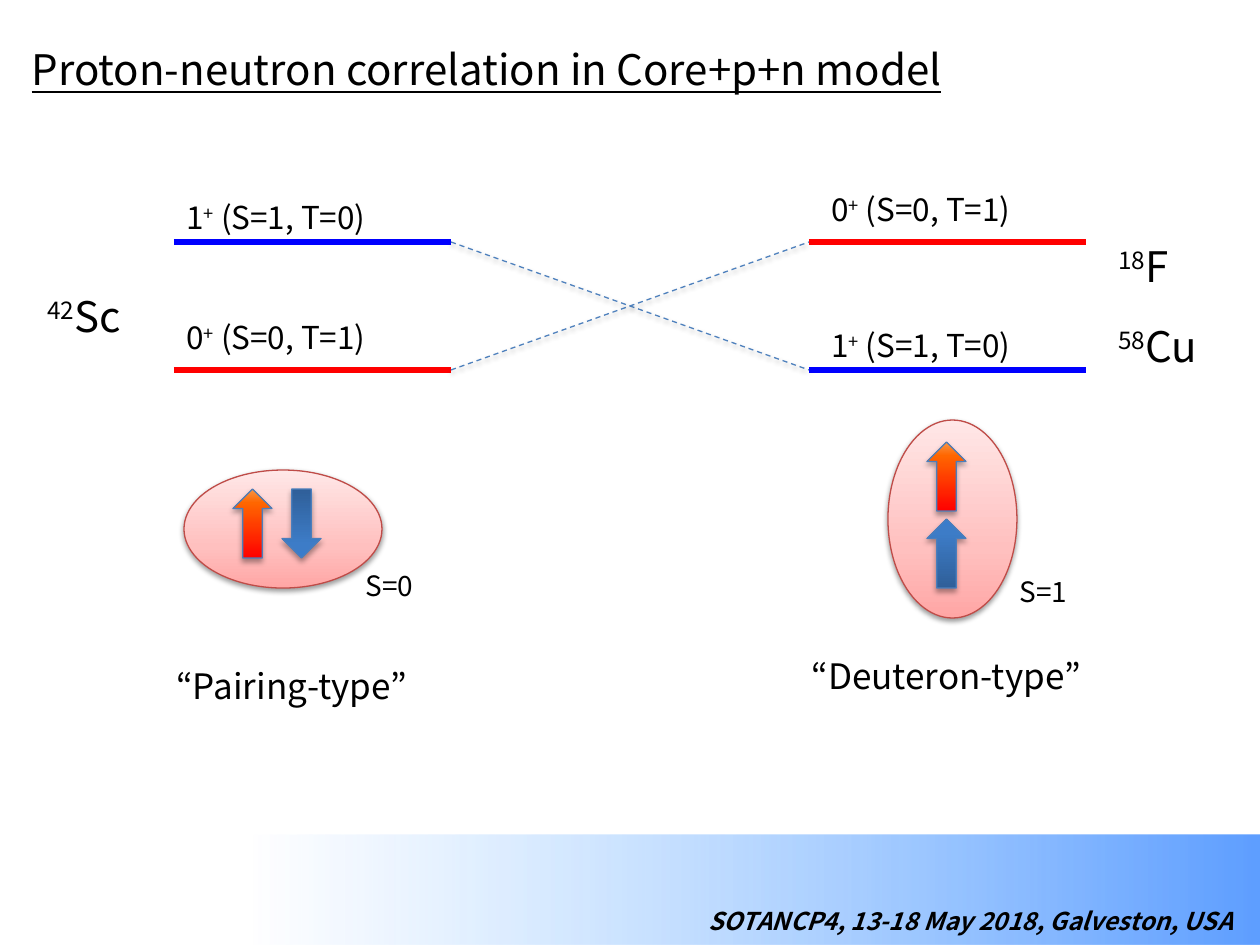
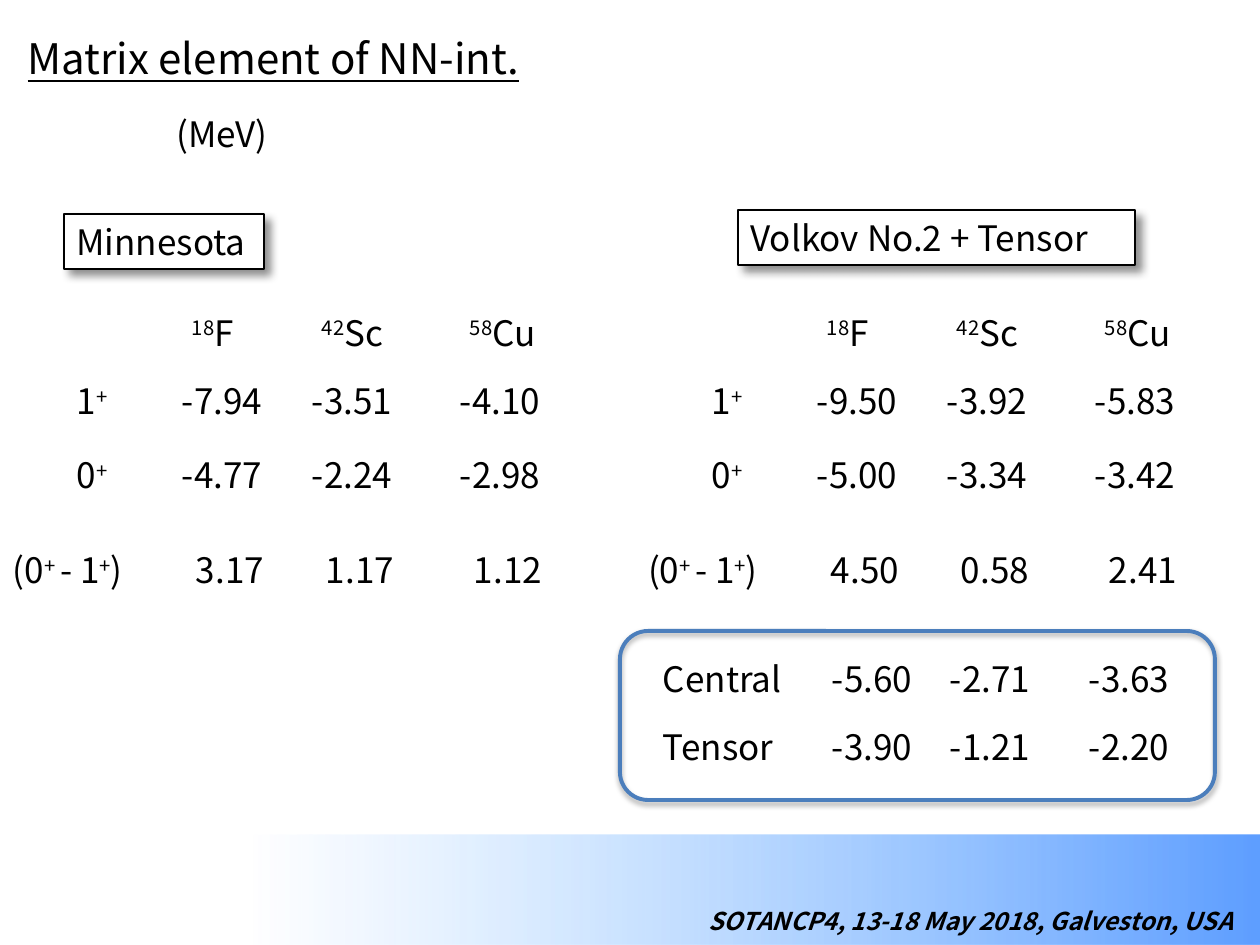
import lxml.etree
import pptx
import pptx.dml.color
import pptx.enum.dml
import pptx.enum.shapes
import pptx.enum.text
import pptx.oxml.ns
import pptx.util

PX = 914400 / 126
FONT = "Noto Sans CJK JP"
FOOTER = "SOTANCP4, 13-18 May 2018, Galveston, USA"
COLOURS = {
    "text": "000000", "paper": "FFFFFF", "triplet": "0000FF", "singlet": "FF0000",
    "crossing": "4F81BD", "pair edge": "BF4C48", "edge": "4B7EBC",
}
# Gradient stops: position in percent, colour, opacity in percent
GRADIENTS = {
    "band": [(0, "5E9EFF", 100), (80, "85C2FF", 0), (100, "85C2FF", 0)],
    "pair": [(0, "FFA6A5", 100), (35, "FFC0BF", 100), (100, "FFE7E7", 100)],
    "red": [(0, "FF0000", 100), (80, "FF6600", 100), (100, "F79646", 100)],
    "blue": [(0, "2F5F99", 100), (80, "3D7CC7", 100), (100, "3A7CCB", 100)],
}
# Shadows: opacity in percent, blur and distance in points, direction in degrees
SOFT, RAISED, CAST = (38, 3.1, 1.6, 90), (35, 3.1, 1.8, 90), (43, 5, 5, 45)
# Levels: label, colour, distance from the label's top down to the line
LEVELS = {
    "triplet": ("1^+^ (S=1, T=0)", "triplet", 50),
    "singlet": ("0^+^ (S=0, T=1)", "singlet", 58),
}
NUCLEI = ["", "^18^F", "^42^Sc", "^58^Cu"]
NO_GRID_STYLE = "{2D5ABB26-0587-4C30-8999-92F81FD0307C}"
SHAPES = pptx.enum.shapes.MSO_SHAPE


def px(*lengths):
    return [pptx.util.Emu(round(length * PX)) for length in lengths]


def rgb(name):
    return pptx.dml.color.RGBColor.from_string(COLOURS[name])


def add_node(parent, tag, **attributes):
    node = lxml.etree.SubElement(parent, pptx.oxml.ns.qn(tag))
    for key, value in attributes.items():
        node.set(key, str(value))
    return node


def add_colour(parent, hex_colour, opacity):
    colour = add_node(parent, "a:srgbClr", val=hex_colour)
    if opacity < 100:
        add_node(colour, "a:alpha", val=opacity * 1000)


def set_gradient(shape, name, angle=270):
    shape.fill.gradient()
    gradient = shape.element.spPr.find(pptx.oxml.ns.qn("a:gradFill"))
    for child in list(gradient):
        gradient.remove(child)
    stops = add_node(gradient, "a:gsLst")
    for position, hex_colour, opacity in GRADIENTS[name]:
        add_colour(add_node(stops, "a:gs", pos=position * 1000), hex_colour, opacity)
    add_node(gradient, "a:lin", ang=angle * 60000, scaled=0)


def set_line(shape, colour, width):
    shape.line.color.rgb = rgb(colour)
    shape.line.width = pptx.util.Pt(width)


def add_shadow(effects, shadow):
    opacity, blur, distance, direction = shadow
    outer = add_node(effects, "a:outerShdw", blurRad=pptx.util.Pt(blur),
                     dist=pptx.util.Pt(distance), dir=direction * 60000,
                     algn="ctr", rotWithShape=0)
    add_colour(outer, COLOURS["text"], opacity)


def set_shadow(shape, shadow):
    shape.shadow.inherit = False
    add_shadow(shape.element.spPr.find(pptx.oxml.ns.qn("a:effectLst")), shadow)


def write(frame, text, size, underline=None):
    """Fill a text frame; text between carets is raised."""
    para = frame.paragraphs[0]
    para.alignment = pptx.enum.text.PP_ALIGN.LEFT
    for index, piece in enumerate(text.split("^")):
        if not piece:
            continue
        span = para.add_run()
        span.text = piece
        span.font.name = FONT
        span.font.size = pptx.util.Pt(size)
        span.font.color.rgb = rgb("text")
        span.font.underline = underline
        if index % 2:
            span._r.get_or_add_rPr().set("baseline", "30000")


def add_text(page, box, text, size, wrap=False):
    label = page.shapes.add_textbox(*px(*box))
    label.text_frame.word_wrap = wrap
    label.text_frame.auto_size = pptx.enum.text.MSO_AUTO_SIZE.SHAPE_TO_FIT_TEXT
    write(label.text_frame, text, size)
    return label


def add_line(page, start, end, colour, width, shadow=None):
    line = page.shapes.add_connector(
        pptx.enum.shapes.MSO_CONNECTOR.STRAIGHT, *px(*start, *end))
    set_line(line, colour, width)
    effects = add_node(line.element.spPr, "a:effectLst")
    if shadow:
        add_shadow(effects, shadow)
    return line


def add_band(page, layout):
    """Place the footer band on the layout, behind everything else."""
    band = page.shapes.add_shape(SHAPES.RECTANGLE, *px(0, 835, 1260, 110))
    set_gradient(band, "band", 180)
    band.line.fill.background()
    band.shadow.inherit = False
    band.element.xpath(".//p:cNvPr")[0].set("id", "20")
    layout.shapes.element.insert(2, band.element)


def add_page(deck, title, box):
    """Add a page with its underlined title and the conference footer."""
    page = deck.slides.add_slide(deck.slide_layouts[5])
    heading = page.shapes.title
    heading.left, heading.top, heading.width, heading.height = px(*box)
    frame = heading.text_frame
    frame.word_wrap = False
    frame.auto_size = pptx.enum.text.MSO_AUTO_SIZE.SHAPE_TO_FIT_TEXT
    frame.vertical_anchor = pptx.enum.text.MSO_ANCHOR.TOP
    write(frame, title, 24, underline=True)
    footer = add_text(page, (530, 900, 716, 43), FOOTER, 14, wrap=True)
    para = footer.text_frame.paragraphs[0]
    para.alignment = pptx.enum.text.PP_ALIGN.RIGHT
    para.runs[0].font.bold = para.runs[0].font.italic = True
    return page


def add_level_pair(page, box, names, inset):
    """Draw two levels, on the top and the bottom edge of the box."""
    left, top, width, height = box
    for name, level in zip(names, (top, top + height)):
        text, colour, lift = LEVELS[name]
        add_text(page, (left + inset, level - lift, 254, 50), text, 18)
        add_line(page, (left, level), (left + width, level), colour, 3)


def add_crossing(page, box):
    left, top, width, height = box
    for start, end in ((top, top + height), (top + height, top)):
        line = add_line(page, (left, start), (left + width, end), "crossing", 0.75, SOFT)
        line.line.dash_style = pptx.enum.dml.MSO_LINE.DASH


def add_pair(page, box, arrows, spin, caption):
    """Draw a nucleon pair; arrows, spin and caption are offset from the box."""
    left, top = box[:2]
    oval = page.shapes.add_shape(SHAPES.OVAL, *px(*box))
    set_gradient(oval, "pair")
    set_line(oval, "pair edge", 0.75)
    set_shadow(oval, SOFT)
    for across, down, colour, rotation in arrows:
        arrow = page.shapes.add_shape(
            SHAPES.UP_ARROW, *px(left + across, top + down, 39, 69))
        arrow.rotation = rotation
        set_gradient(arrow, colour)
        set_line(arrow, "edge", 0.75)
        set_shadow(arrow, RAISED)
    for (across, down, width, height, text), size in ((spin, 16), (caption, 20)):
        add_text(page, (left + across, top + down, width, height), text, size)


def add_matrix(page, corner, widths, heights, rows, indents):
    """Add a plain table; indents give each row's label and value indent."""
    frame = page.shapes.add_table(
        len(rows), len(widths), *px(*corner, sum(widths), sum(heights)))
    table = frame.table
    table.first_row = table.horz_banding = False
    frame.element.xpath(".//a:tableStyleId")[0].text = NO_GRID_STYLE
    for column, width in zip(table.columns, px(*widths)):
        column.width = width
    for row, height, texts, (label, value) in zip(
            table.rows, px(*heights), rows, indents):
        row.height = height
        for index, (cell, text) in enumerate(zip(row.cells, texts)):
            cell.fill.background()
            cell.margin_left = px(13 + (value if index else label))[0]
            cell.margin_right = 0
            cell.vertical_anchor = pptx.enum.text.MSO_ANCHOR.TOP
            write(cell.text_frame, text, 20)


def add_interaction(page, corner, name_box, name, values):
    """Add the framed name of an interaction and its matrix elements."""
    left, top = corner
    across, down, width, height = name_box
    plate = add_text(page, (left + across, top + down, width, height), name, 20)
    plate.fill.solid()
    plate.fill.fore_color.rgb = rgb("paper")
    set_line(plate, "text", 0.75)
    set_shadow(plate, CAST)
    labels = ["1^+^", "0^+^", "(0^+ ^- 1^+^)"]
    rows = [NUCLEI] + [[label, *row] for label, row in zip(labels, values)]
    add_matrix(page, corner, (169, 130, 148, 130), (69, 74, 95, 56), rows,
               [(0, 10), (64, 0), (64, 0), (0, 14)])


def add_contributions(page, box, rows):
    left, top = box[:2]
    add_matrix(page, (left + 30, top + 14), (169, 118, 139, 120), (69, 56),
               rows, [(0, 0)] * 2)
    border = page.shapes.add_shape(SHAPES.ROUNDED_RECTANGLE, *px(*box))
    border.fill.background()
    set_line(border, "edge", 2.25)
    set_shadow(border, RAISED)


def add_correlation_page(deck):
    page = add_page(deck, "Proton-neutron correlation in Core+p+n model",
                    (19, 37, 999, 63))
    add_band(page, deck.slide_layouts[5])
    add_level_pair(page, (174, 242, 277, 128), ("triplet", "singlet"), 0)
    add_level_pair(page, (809, 242, 277, 128), ("singlet", "triplet"), 10)
    add_crossing(page, (451, 242, 358, 128))
    add_pair(page, (184, 470, 198, 118),
             [(49, 19, "red", 0), (98, 19, "blue", 180)],
             (169, 92, 83, 47, "S=0"), (-20, 188, 265, 55, "“Pairing-type”"))
    add_pair(page, (888, 420, 129, 198),
             [(39, 99, "blue", 0), (39, 22, "red", 0)],
             (119, 148, 83, 47, "S=1"), (-89, 228, 309, 55, "“Deuteron-type”"))
    for left, top, width, nucleus in ((35, 284, 108, "^42^Sc"),
                                      (1106, 234, 86, "^18^F"),
                                      (1106, 314, 116, "^58^Cu")):
        add_text(page, (left, top, width, 63), nucleus, 24)


def add_matrix_page(deck):
    page = add_page(deck, "Matrix element of NN-int.", (15, 26, 552, 63))
    add_text(page, (164, 106, 159, 55), "(MeV)", 20, wrap=True)
    add_interaction(page, (0, 299), (64, -85, 200, 55), "Minnesota",
                    [("-7.94", "-3.51", "-4.10"),
                     ("-4.77", "-2.24", "-2.98"),
                     ("3.17", "1.17", "1.12")])
    add_interaction(page, (635, 299), (103, -89, 397, 55), "Volkov No.2 + Tensor",
                    [("-9.50", "-3.92", "-5.83"),
                     ("-5.00", "-3.34", "-3.42"),
                     ("4.50", "0.58", "2.41")])
    add_contributions(page, (620, 631, 595, 169),
                      [("Central", "-5.60", "-2.71", "-3.63"),
                       ("Tensor", "-3.90", "-1.21", "-2.20")])


def main():
    deck = pptx.Presentation()
    deck.slide_width, deck.slide_height = px(1260, 945)
    add_correlation_page(deck)
    add_matrix_page(deck)
    deck.save("out.pptx")


if __name__ == "__main__":
    main()
